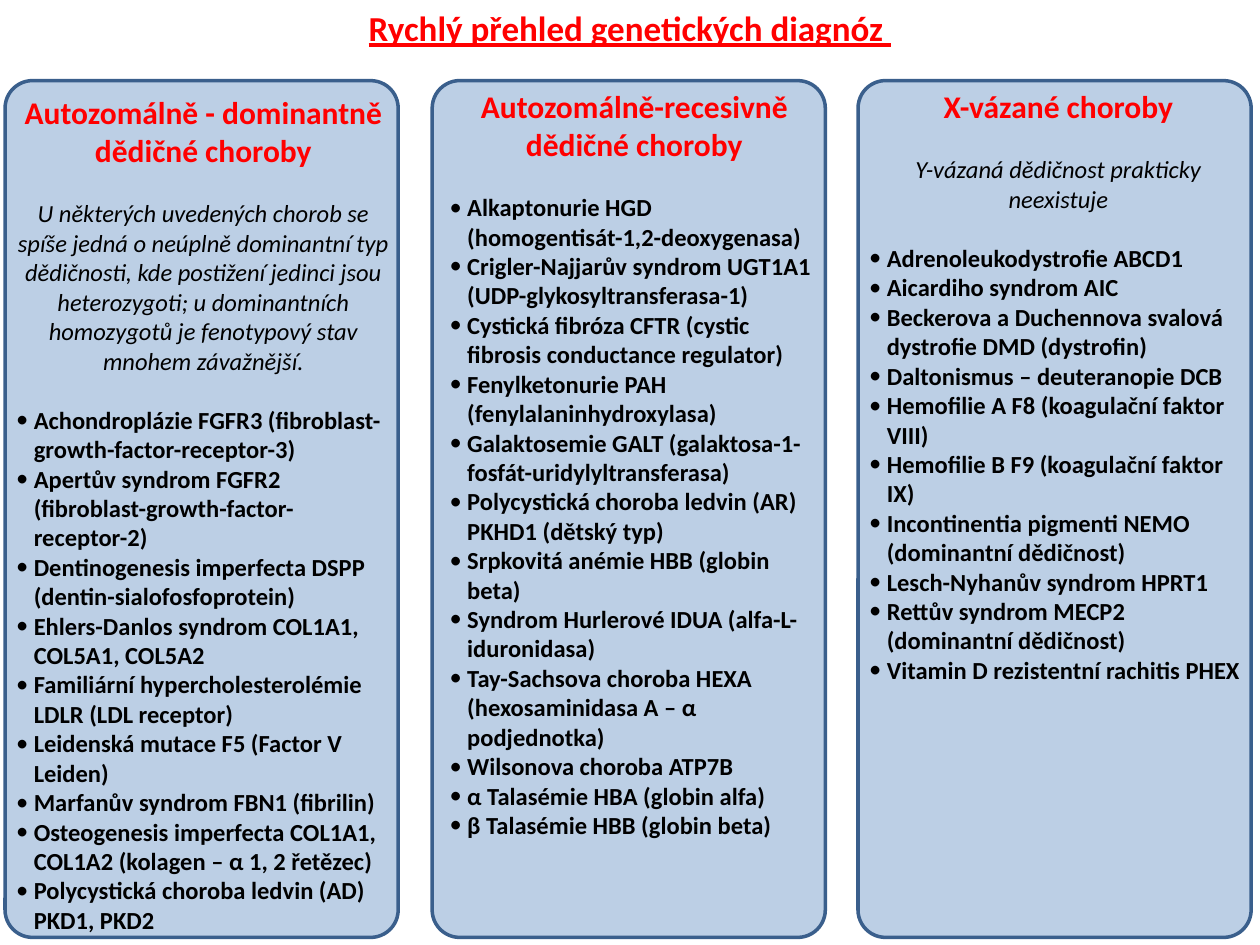
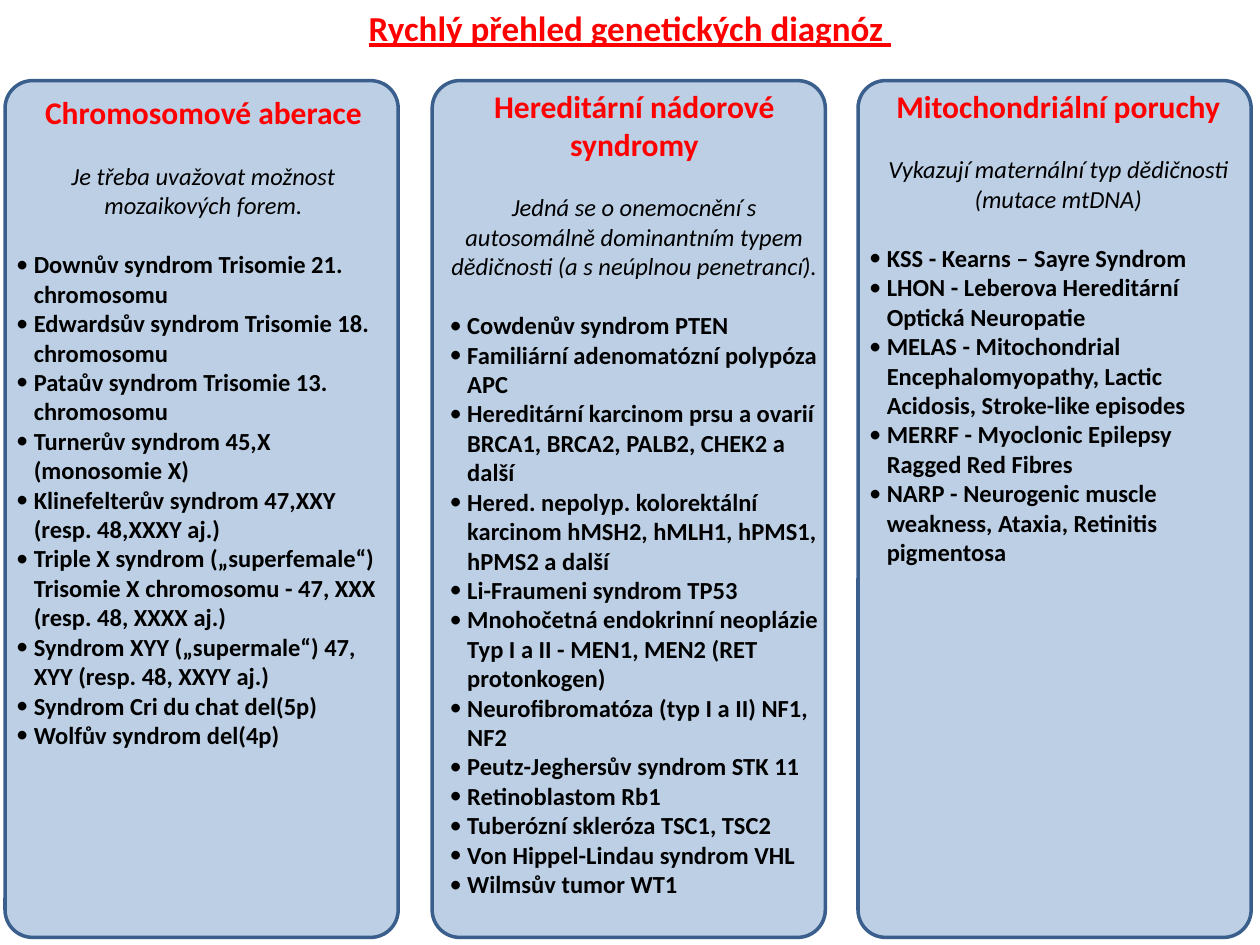
from lxml import etree
from pptx import Presentation
from pptx.dml.color import RGBColor
from pptx.enum.shapes import MSO_SHAPE
from pptx.enum.text import MSO_ANCHOR, MSO_AUTO_SIZE, PP_ALIGN
from pptx.oxml.ns import qn
from pptx.util import Inches, Pt

CENTER, LEFT = PP_ALIGN.CENTER, PP_ALIGN.LEFT
ROUNDED = MSO_SHAPE.ROUNDED_RECTANGLE
TOP = MSO_ANCHOR.TOP
NO_FIT, GROW = MSO_AUTO_SIZE.NONE, MSO_AUTO_SIZE.SHAPE_TO_FIT_TEXT

FONT = "Calibri"
RED, BLACK = "FF0000", "000000"
PANEL_FILL, PANEL_LINE = "4F81BD", "3A5F8C"
TITLE = "Rychlý přehled genetických diagnóz "
TITLE_ONLY = 5
GAP = 17
BULLET_INDENT = 0.14

PANEL_LEFTS = (0.04, 3.43, 6.81)
PANEL_TOP, PANEL_W, PANEL_H = 0.64, 3.12, 6.8
TEXT_BOXES = ((0.03, 0.69, 3.17), (3.47, 0.64, 3.13), (6.8, 0.64, 3.2))

INHERITANCE = [
    {
        "heading": "Autozomálně - dominantně dědičné choroby",
        "note": "U některých uvedených chorob se spíše jedná o neúplně dominantní "
                "typ dědičnosti, kde postižení jedinci jsou heterozygoti; "
                "u dominantních homozygotů je fenotypový stav mnohem závažnější.",
        "diseases": [
            "Achondroplázie FGFR3 (fibroblast-growth-factor-receptor-3)",
            "Apertův syndrom FGFR2 (fibroblast-growth-factor-receptor-2)",
            "Dentinogenesis imperfecta DSPP (dentin-sialofosfoprotein)",
            "Ehlers-Danlos syndrom COL1A1, COL5A1, COL5A2",
            "Familiární hypercholesterolémie LDLR (LDL receptor)",
            "Leidenská mutace F5 (Factor V Leiden)",
            "Marfanův syndrom FBN1 (fibrilin)",
            "Osteogenesis imperfecta COL1A1, COL1A2 (kolagen – α 1, 2 řetězec)",
            "Polycystická choroba ledvin (AD) PKD1, PKD2",
        ],
        "height": 6.83,
    },
    {
        "heading": "Autozomálně-recesivně dědičné choroby",
        "note": None,
        "diseases": [
            "Alkaptonurie HGD (homogentisát-1,2-deoxygenasa)",
            "Crigler-Najjarův syndrom UGT1A1 (UDP-glykosyltransferasa-1)",
            "Cystická fibróza CFTR (cystic fibrosis conductance regulator)",
            "Fenylketonurie PAH (fenylalaninhydroxylasa)",
            "Galaktosemie GALT (galaktosa-1-fosfát-uridylyltransferasa)",
            "Polycystická choroba ledvin (AR) PKHD1 (dětský typ)",
            "Srpkovitá anémie HBB (globin beta)",
            "Syndrom Hurlerové IDUA (alfa-L-iduronidasa)",
            "Tay-Sachsova choroba HEXA (hexosaminidasa A – α podjednotka)",
            "Wilsonova choroba ATP7B",
            "α Talasémie HBA (globin alfa)",
            "β Talasémie HBB (globin beta)",
        ],
        "height": 6.13,
    },
    {
        "heading": "X-vázané choroby",
        "note": "Y-vázaná dědičnost prakticky neexistuje",
        "diseases": [
            "Adrenoleukodystrofie ABCD1",
            "Aicardiho syndrom AIC",
            "Beckerova a Duchennova svalová dystrofie DMD (dystrofin)",
            "Daltonismus – deuteranopie DCB",
            "Hemofilie A F8 (koagulační faktor VIII)",
            "Hemofilie B F9 (koagulační faktor IX)",
            "Incontinentia pigmenti NEMO (dominantní dědičnost)",
            "Lesch-Nyhanův syndrom HPRT1",
            "Rettův syndrom MECP2 (dominantní dědičnost)",
            "Vitamin D rezistentní rachitis PHEX",
        ],
        "height": 4.88,
    },
]

OTHER_CAUSES = [
    {
        "heading": "Chromosomové aberace",
        "note": "Je třeba uvažovat možnost mozaikových forem.",
        "diseases": [
            "Downův syndrom Trisomie 21. chromosomu",
            "Edwardsův syndrom Trisomie 18. chromosomu",
            "Pataův syndrom Trisomie 13. chromosomu",
            "Turnerův syndrom 45,X (monosomie X)",
            "Klinefelterův syndrom 47,XXY (resp. 48,XXXY aj.)",
            "Triple X syndrom („superfemale“) Trisomie X chromosomu - 47, XXX "
            "(resp. 48, XXXX aj.)",
            "Syndrom XYY („supermale“) 47, XYY (resp. 48, XXYY aj.)",
            "Syndrom Cri du chat del(5p)",
            "Wolfův syndrom del(4p)",
        ],
        "height": 5.35,
    },
    {
        "heading": "Hereditární nádorové syndromy",
        "note": "Jedná se o onemocnění s autosomálně dominantním typem "
                "dědičnosti (a s neúplnou penetrancí).",
        "diseases": [
            "Cowdenův syndrom PTEN",
            "Familiární adenomatózní polypóza APC",
            "Hereditární karcinom prsu a ovarií BRCA1, BRCA2, PALB2, CHEK2 a další",
            "Hered. nepolyp. kolorektální karcinom hMSH2, hMLH1, hPMS1, hPMS2 a další",
            "Li-Fraumeni syndrom TP53",
            "Mnohočetná endokrinní neoplázie Typ I a II - MEN1, MEN2 "
            "(RET protonkogen)",
            "Neurofibromatóza (typ I a II) NF1, NF2",
            "Peutz-Jeghersův syndrom STK 11",
            "Retinoblastom Rb1",
            "Tuberózní skleróza TSC1, TSC2",
            "Von Hippel-Lindau syndrom VHL",
            "Wilmsův tumor WT1",
        ],
        "height": 6.6,
    },
    {
        "heading": "Mitochondriální poruchy",
        "note": "Vykazují maternální typ dědičnosti (mutace mtDNA)",
        "diseases": [
            "KSS - Kearns – Sayre Syndrom",
            "LHON - Leberova Hereditární Optická Neuropatie",
            "MELAS - Mitochondrial Encephalomyopathy, Lactic Acidosis, "
            "Stroke-like episodes",
            "MERRF - Myoclonic Epilepsy Ragged Red Fibres",
            "NARP - Neurogenic muscle weakness, Ataxia, Retinitis pigmentosa",
        ],
        "height": 3.94,
    },
]


def rgb(color):
    """Turn a hex string into a colour."""
    return RGBColor.from_string(color)


def set_bullet(p):
    """Give a paragraph a hanging round bullet."""
    pPr = p._p.get_or_add_pPr()
    indent = Inches(BULLET_INDENT)
    pPr.set("marL", str(indent))
    pPr.set("indent", str(-indent))
    etree.SubElement(pPr, qn("a:buFont")).set("typeface", FONT)
    etree.SubElement(pPr, qn("a:buChar")).set("char", "•")


def write(p, text, size=14, color=BLACK, bold=False, italic=False,
          underline=False, align=CENTER, before=0, bullet=False):
    """Write one formatted paragraph."""
    if bullet:
        set_bullet(p)
    p.alignment = align
    if before:
        p.space_before = Pt(before)
    r = p.add_run()
    r.text = text
    r.font.name = FONT
    r.font.size = Pt(size)
    r.font.bold = bold
    r.font.italic = italic
    r.font.underline = underline
    r.font.color.rgb = rgb(color)


def add_title(prs, s):
    """Place the underlined title across the top."""
    sp = s.shapes.title
    sp.left, sp.top = Inches(0), Inches(0)
    sp.width, sp.height = prs.slide_width, Inches(0.44)
    tf = sp.text_frame
    tf.auto_size = NO_FIT
    tf.vertical_anchor = TOP
    write(tf.paragraphs[0], TITLE, size=20, color=RED, bold=True, underline=True)


def add_panel(s, left):
    """Draw one translucent rounded panel."""
    sp = s.shapes.add_shape(ROUNDED, Inches(left), Inches(PANEL_TOP),
                            Inches(PANEL_W), Inches(PANEL_H))
    sp.adjustments[0] = 0.07
    sp.shadow.inherit = False
    sp.fill.solid()
    sp.fill.fore_color.rgb = rgb(PANEL_FILL)
    fill = sp.fill._xPr.find(qn("a:solidFill"))
    etree.SubElement(fill[0], qn("a:alpha")).set("val", "38000")
    sp.line.color.rgb = rgb(PANEL_LINE)
    sp.line.width = Pt(2)


def add_group_text(s, box, group):
    """Write a disease group's heading, note and bulleted list."""
    left, top, width = box
    sp = s.shapes.add_textbox(Inches(left), Inches(top), Inches(width),
                              Inches(group["height"]))
    tf = sp.text_frame
    tf.word_wrap = True
    tf.auto_size = GROW
    write(tf.paragraphs[0], group["heading"], size=18, color=RED, bold=True)
    if group["note"]:
        write(tf.add_paragraph(), group["note"], italic=True, before=GAP)
    for i, disease in enumerate(group["diseases"]):
        write(tf.add_paragraph(), disease, bold=True, align=LEFT, bullet=True,
              before=0 if i else GAP)


def add_overview(prs, groups):
    """Add a slide with three disease groups side by side."""
    s = prs.slides.add_slide(prs.slide_layouts[TITLE_ONLY])
    add_title(prs, s)
    for left in PANEL_LEFTS:
        add_panel(s, left)
    for box, group in zip(TEXT_BOXES, groups):
        add_group_text(s, box, group)


def main():
    """Build and save the presentation."""
    prs = Presentation()
    prs.slide_width, prs.slide_height = Inches(10), Inches(7.5)
    for groups in (INHERITANCE, OTHER_CAUSES):
        add_overview(prs, groups)
    prs.save("out.pptx")


if __name__ == "__main__":
    main()
